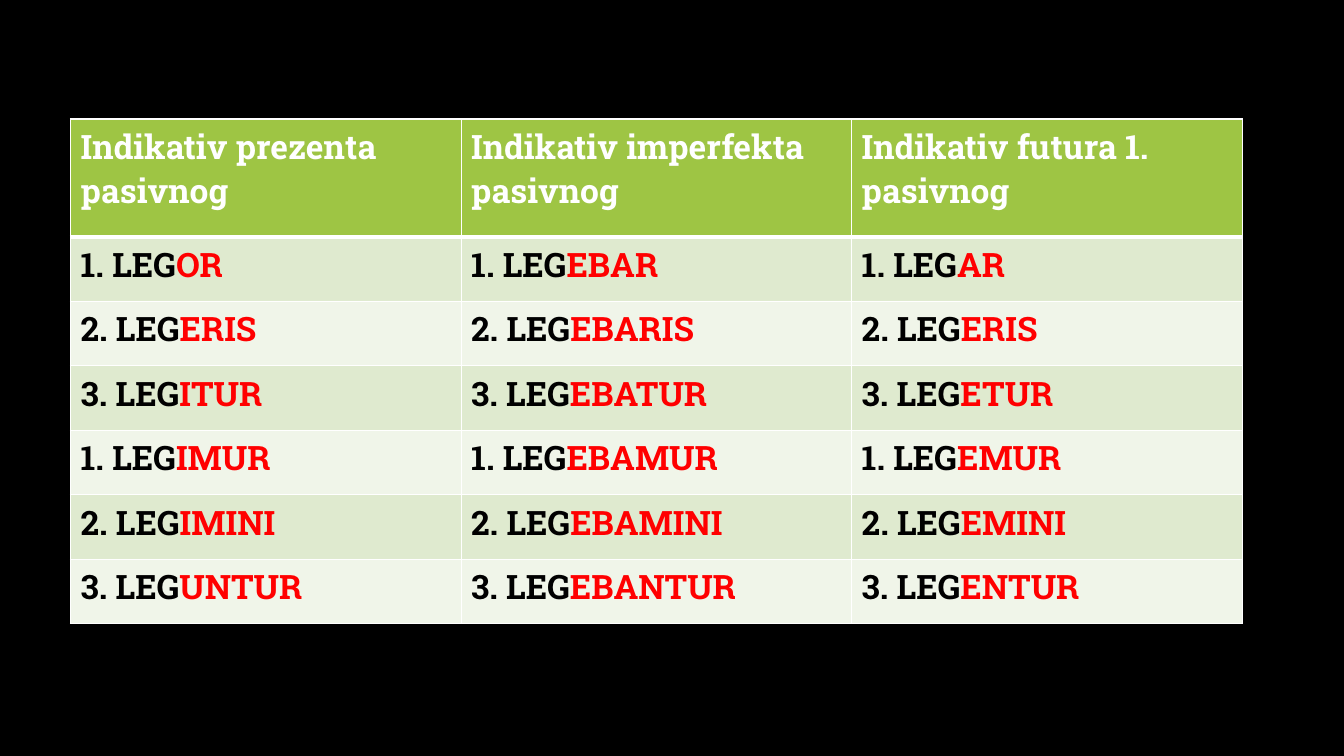
from lxml import etree
from pptx import Presentation
from pptx.dml.color import RGBColor
from pptx.oxml.ns import qn
from pptx.util import Pt

PX = 9144  # 100 px to the inch
BLACK = RGBColor(0x00, 0x00, 0x00)
WHITE = RGBColor(0xFF, 0xFF, 0xFF)
RED = RGBColor(0xFF, 0x00, 0x00)
GREEN = RGBColor(0x9E, 0xC5, 0x44)
BANDS = (RGBColor(0xDF, 0xEA, 0xCF), RGBColor(0xF0, 0xF5, 0xE9))
FONT = {"name": "Roboto Slab", "size": Pt(24), "bold": True}

# Heading and the endings for persons 1-3 singular, then 1-3 plural
STEM = "LEG"
TENSES = {
    "Indikativ prezenta pasivnog":
        ("OR", "ERIS", "ITUR", "IMUR", "IMINI", "UNTUR"),
    "Indikativ imperfekta pasivnog":
        ("EBAR", "EBARIS", "EBATUR", "EBAMUR", "EBAMINI", "EBANTUR"),
    "Indikativ futura 1. pasivnog":
        ("AR", "ERIS", "ETUR", "EMUR", "EMINI", "ENTUR"),
}
FORMS = 6
ROW = 64


def add_run(cell, text, color):
    run = cell.text_frame.paragraphs[0].add_run()
    run.text = text
    for key, value in FONT.items():
        setattr(run.font, key, value)
    run.font.color.rgb = color


def set_cell(cell, fill, runs, base=1):
    """Fill a cell, write its runs and rule it; base is the lower line in pt."""
    cell.fill.solid()
    cell.fill.fore_color.rgb = fill
    for text, color in runs:
        add_run(cell, text, color)
    # Borders come before the fill in the cell properties
    props = cell._tc.get_or_add_tcPr()
    sides = {"a:lnL": 1, "a:lnR": 1, "a:lnT": 1, "a:lnB": base}
    for spot, (tag, width) in enumerate(sides.items()):
        line = etree.Element(qn(tag), w=str(Pt(width)))
        solid = etree.SubElement(line, qn("a:solidFill"))
        etree.SubElement(solid, qn("a:srgbClr"), val=str(WHITE))
        props.insert(spot, line)


def add_forms(slide, left, top, width, height):
    """Table of verb forms, one tense to a column, inside the given box."""
    box = [side * PX for side in (left, top, width, height)]
    table = slide.shapes.add_table(FORMS + 1, len(TENSES), *box).table
    for row in table.rows:
        row.height = ROW * PX
    table.rows[0].height = (height - FORMS * ROW) * PX

    for col, (head, ends) in enumerate(TENSES.items()):
        set_cell(table.cell(0, col), GREEN, [(head, WHITE)], base=3)
        for num, end in enumerate(ends):
            runs = [(f"{num % 3 + 1}. {STEM}", BLACK), (end, RED)]
            cell = table.cell(num + 1, col)
            set_cell(cell, BANDS[num % 2], runs)
            if num == 0:  # match the thick rule under the heading
                cell._tc.tcPr.find(qn("a:lnT")).set("w", str(Pt(3)))


def main():
    deck = Presentation()
    deck.slide_width, deck.slide_height = 1333 * PX, 750 * PX
    slide = deck.slides.add_slide(deck.slide_layouts[6])
    slide.background.fill.solid()
    slide.background.fill.fore_color.rgb = BLACK
    add_forms(slide, 70, 118, 1162, 501)
    deck.save("out.pptx")


if __name__ == "__main__":
    main()
